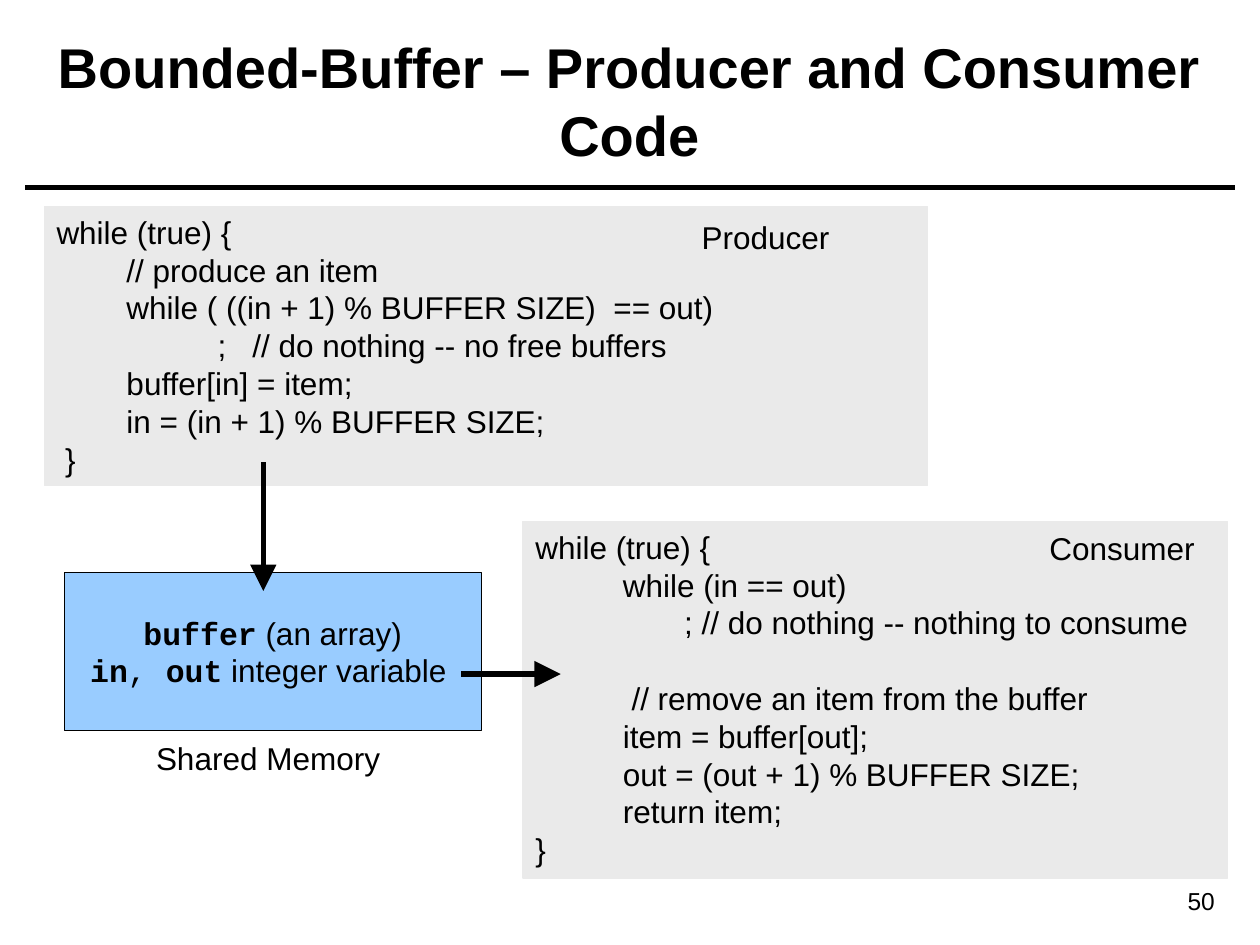
import pptx
import pptx.util
import pptx.dml.color
import pptx.enum.shapes
import pptx.enum.text
import pptx.oxml.ns
import lxml.etree

Pt = pptx.util.Pt
ALIGN = pptx.enum.text.PP_ALIGN
MID = pptx.enum.text.MSO_ANCHOR.MIDDLE
THEME = {
    "ink": "000000", "code": "EAEAEA", "store": "99CCFF",
    "sans": "Arial", "mono": "Courier New",
    "head": 32, "body": 18, "foot": 14,
    "rule": 3, "lead": 1.2, "space": 5,  # lead: line height, space: points per indent step
}

deck = pptx.Presentation()
deck.slide_width, deck.slide_height = pptx.util.Inches(10), pptx.util.Inches(7.5)
slide = deck.slides.add_slide(deck.slide_layouts[6])
# Grid of 100 columns by 75 rows
col, row = deck.slide_width / 100, deck.slide_height / 75


def color(name):
    return pptx.dml.color.RGBColor.from_string(THEME[name])


def add_box(x, y, wide, high, lines, size="body", align=ALIGN.LEFT, wrap=True,
            fill=None, edge=None, width=0.25, bold=False):
    """Add a box of lines, each given as (indent steps, text)."""
    place = [round(v) for v in (x * col, y * row, wide * col, high * row)]
    if fill:
        box = slide.shapes.add_shape(pptx.enum.shapes.MSO_SHAPE.RECTANGLE, *place)
        box.shadow.inherit = False
        box.fill.solid()
        box.fill.fore_color.rgb = color(fill)
        box.line.color.rgb = color(edge)
        box.line.width = Pt(width)
    else:
        box = slide.shapes.add_textbox(*place)
    frame = box.text_frame
    frame.word_wrap = wrap
    frame.vertical_anchor = pptx.enum.text.MSO_ANCHOR.TOP
    frame.text = "\n".join(text for _, text in lines)
    for para, (steps, _) in zip(frame.paragraphs, lines):
        para.alignment = align
        para.line_spacing = Pt(THEME["lead"] * THEME[size])
        para._p.get_or_add_pPr().set("marL", str(Pt(steps * THEME["space"])))
        for run in para.runs:
            run.font.name, run.font.size = THEME["sans"], Pt(THEME[size])
            run.font.bold, run.font.color.rgb = bold, color("ink")
    return box


# Title and page number
add_box(87, 69.8, 10.4, 3.4, [(0, "50")], "foot", ALIGN.RIGHT)
title = add_box(3.5, 1.7, 92.9, 12.5, [(0, "Bounded-Buffer – Producer and Consumer Code")],
                "head", ALIGN.CENTER, bold=True)
title.text_frame.vertical_anchor = MID

# Code panels
taker = add_box(41.5, 41.4, 55.9, 28.3, [
    (0, "while (true) {"),
    (10, "while (in == out)"),
    (17, "; // do nothing -- nothing to consume"),
    (11, "// remove an item from the buffer"),
    (10, "item = buffer[out];"),
    (10, "out = (out + 1) % BUFFER SIZE;"),
    (10, "return item;"),
    (0, "}"),
], fill="code", edge="code", width=0.75)
# One open line above the second half
taker.text_frame.paragraphs[3].space_before = Pt(THEME["lead"] * THEME["body"])

add_box(3.5, 16.4, 70.1, 22.1, [
    (0, "while (true) {"),
    (8, "// produce an item"),
    (8, "while ( ((in + 1) % BUFFER SIZE)  == out)"),
    (18.4, ";   // do nothing -- no free buffers"),
    (8, "buffer[in] = item;"),
    (8, "in = (in + 1) % BUFFER SIZE;"),
    (1, "}"),
], fill="code", edge="code")

# Shared memory, with names in bold code type
store = add_box(5.1, 45.4, 33.1, 12.6, [(0, ""), (0, "")], align=ALIGN.CENTER,
                wrap=False, fill="store", edge="ink")
store.text_frame.vertical_anchor = MID
parts = [
    [("buffer", "mono", True), (" (an array)", "sans", False)],
    [("in", "mono", True), (", ", "mono", False), ("out", "mono", True),
     (" integer variable ", "sans", False)],
]
for para, runs in zip(store.text_frame.paragraphs, parts):
    for text, face, bold in runs:
        run = para.add_run()
        run.text = text
        run.font.name, run.font.size = THEME[face], Pt(THEME["body"])
        run.font.bold, run.font.color.rgb = bold, color("ink")

# Labels, with room to spare on the right
for x, y, wide, text in [(54.7, 16.8, 14, "Producer"), (82.3, 41.5, 15, "Consumer"),
                         (11.4, 58.2, 22, "Shared Memory")]:
    add_box(x, y, wide, 4, [(0, text)])

# Title rule, then the data flow arrows
for x1, y1, x2, y2, arrow in [(2, 14.9, 98, 14.9, False),
                              (20.9, 36.7, 20.9, 46.9, True),
                              (36.6, 53.5, 44.5, 53.5, True)]:
    rule = slide.shapes.add_connector(
        pptx.enum.shapes.MSO_CONNECTOR.STRAIGHT,
        round(x1 * col), round(y1 * row), round(x2 * col), round(y2 * row))
    rule.line.color.rgb = color("ink")
    rule.line.width = Pt(THEME["rule"])
    if arrow:
        tip = lxml.etree.SubElement(rule.line._get_or_add_ln(), pptx.oxml.ns.qn("a:tailEnd"))
        for key, value in [("type", "triangle"), ("w", "lg"), ("len", "lg")]:
            tip.set(key, value)
    lxml.etree.SubElement(rule._element.spPr, pptx.oxml.ns.qn("a:effectLst"))

deck.save("out.pptx")
